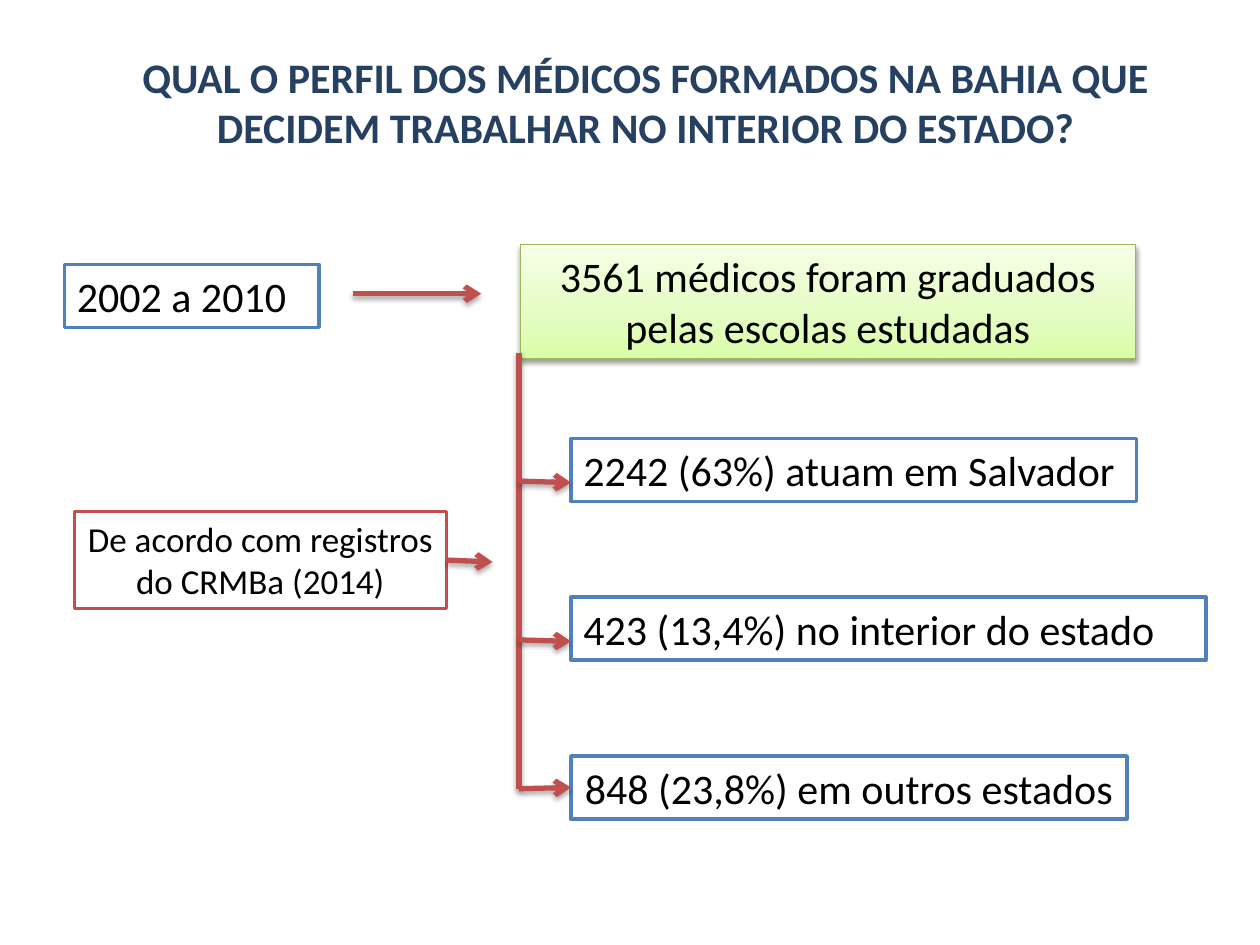
from copy import deepcopy
from dataclasses import dataclass

from lxml import etree
from pptx import Presentation
from pptx.dml.color import RGBColor
from pptx.enum.shapes import MSO_CONNECTOR, MSO_SHAPE
from pptx.enum.text import MSO_ANCHOR, MSO_AUTO_SIZE, PP_ALIGN
from pptx.oxml.ns import qn
from pptx.util import Cm, Pt

RECTANGLE = MSO_SHAPE.RECTANGLE
STRAIGHT = MSO_CONNECTOR.STRAIGHT
LEFT, CENTER = PP_ALIGN.LEFT, PP_ALIGN.CENTER
LEFT_SIDE, RIGHT_SIDE = 1, 3


@dataclass(frozen=True)
class Theme:
    font: str = "Calibri"
    size: int = 24
    small: int = 20
    text: str = "000000"
    title: str = "254061"
    paper: str = "FFFFFF"
    blue: str = "4F81BD"
    red: str = "C0504D"
    green: str = "98B955"
    green_fade: tuple = ((0, "DAFDA7"), (0.35, "E4FCC2"), (1, "F5FFE7"))


THEME = Theme()

# Lengths in centimetres: left, top, width, height
TITLE = ("QUAL O PERFIL DOS MÉDICOS FORMADOS NA BAHIA QUE "
         "DECIDEM TRABALHAR NO INTERIOR DO ESTADO?", (2.31, 0.91, 21.41, 2.31))
SOURCE = ("De acordo com registros do CRMBa (2014)", (1.5, 10.31, 7.5, 1.96))
PERIOD = ("2002 a 2010", (1.3, 5.33, 5.13, 1.27))
GRADUATES = ("3561 médicos foram graduados pelas escolas estudadas",
             (10.49, 4.93, 12.4, 2.31))

# Text, width, alignment, height of the arrow that leads to it
DESTINATIONS = [
    ("2242 (63%) atuam em Salvador", 11.4, LEFT, 9.7),
    ("423 (13,4%) no interior do estado", 12.8, LEFT, 12.9),
    ("848 (23,8%) em outros estados", 11.21, CENTER, 15.9),
]
DEST_LEFT, DEST_TOP, DEST_HEIGHT, DEST_STEP = 11.51, 8.84, 1.27, 3.2
TRUNK_X, TRUNK_TOP = 10.46, 7.11
SLOPE = 0.03
PERIOD_ARROW = (7.11, 5.92, 9.7, 5.92)
SOURCE_ARROW = (9, 11.3, 9.93, 11.33)


def rgb(value):
    return RGBColor.from_string(value)


def set_shadow(shape, opacity, distance):
    """Give the shape a soft black shadow that falls straight down."""
    properties = shape._element.spPr
    effects = etree.SubElement(properties, qn("a:effectLst"))
    shadow = etree.SubElement(
        effects, qn("a:outerShdw"), blurRad=str(Pt(3.1)), dist=str(Pt(distance)),
        dir="5400000", rotWithShape="0")
    color = etree.SubElement(shadow, qn("a:srgbClr"), val="000000")
    etree.SubElement(color, qn("a:alpha"), val=str(opacity * 1000))


def write(shape, text, align=LEFT, size=THEME.size, color=THEME.text, bold=False):
    frame = shape.text_frame
    frame.text = text
    frame.word_wrap = True
    frame.auto_size = MSO_AUTO_SIZE.SHAPE_TO_FIT_TEXT
    frame.vertical_anchor = MSO_ANCHOR.TOP
    para = frame.paragraphs[0]
    para.alignment = align
    font = para.runs[0].font
    font.name, font.size, font.bold = THEME.font, Pt(size), bold
    font.color.rgb = rgb(color)


def add_box(page, content, line, width=2, **style):
    text, place = content
    box = page.shapes.add_shape(RECTANGLE, *map(Cm, place))
    box.shadow.inherit = False
    box.fill.solid()
    box.fill.fore_color.rgb = rgb(THEME.paper)
    box.line.color.rgb = rgb(line)
    box.line.width = Pt(width)
    write(box, text, **style)
    return box


def fade(box, stops):
    """Fill the box with a gradient that runs from bottom to top."""
    box.fill.gradient()
    box.fill.gradient_angle = 90
    stop_list = box._element.spPr.find(qn("a:gradFill")).find(qn("a:gsLst"))
    while len(stop_list) < len(stops):
        stop_list.append(deepcopy(stop_list[-1]))
    for stop, (position, color) in zip(box.fill.gradient_stops, stops):
        stop.position = position
        stop.color.rgb = rgb(color)


def add_line(shapes, ends, arrow=True):
    line = shapes.add_connector(STRAIGHT, *map(Cm, ends))
    line.line.color.rgb = rgb(THEME.red)
    line.line.width = Pt(3)
    if arrow:
        etree.SubElement(line.line._get_or_add_ln(), qn("a:tailEnd"), type="arrow")
    set_shadow(line, 35, 1.8)
    return line


def add_destinations(page):
    boxes = []
    for row, (text, width, align, _) in enumerate(DESTINATIONS):
        place = (DEST_LEFT, DEST_TOP + row * DEST_STEP, width, DEST_HEIGHT)
        boxes.append(add_box(page, (text, place), THEME.blue, align=align))

    bracket = page.shapes.add_group_shape().shapes
    levels = [level for *_, level in DESTINATIONS]
    add_line(bracket, (TRUNK_X, TRUNK_TOP, TRUNK_X, levels[-1]), arrow=False)
    for box, level in zip(boxes, levels):
        arrow = add_line(bracket, (TRUNK_X, level, DEST_LEFT, level + SLOPE))
        if abs(box.top + box.height / 2 - arrow.end_y) < Cm(0.1):
            arrow.end_connect(box, LEFT_SIDE)


def main():
    deck = Presentation()
    deck.slide_width, deck.slide_height = Cm(25.4), Cm(19.05)
    page = deck.slides.add_slide(deck.slide_layouts[6])

    source = add_box(page, SOURCE, THEME.red, align=CENTER, size=THEME.small)
    text, place = TITLE
    write(page.shapes.add_textbox(*map(Cm, place)), text, CENTER,
          color=THEME.title, bold=True)
    add_box(page, PERIOD, THEME.blue)

    graduates = add_box(page, GRADUATES, THEME.green, width=0.75, align=CENTER)
    fade(graduates, THEME.green_fade)
    graduates.shadow.inherit = True
    set_shadow(graduates, 38, 1.6)

    add_line(page.shapes, PERIOD_ARROW)
    add_destinations(page)
    add_line(page.shapes, SOURCE_ARROW).begin_connect(source, RIGHT_SIDE)
    deck.save("out.pptx")


if __name__ == "__main__":
    main()
